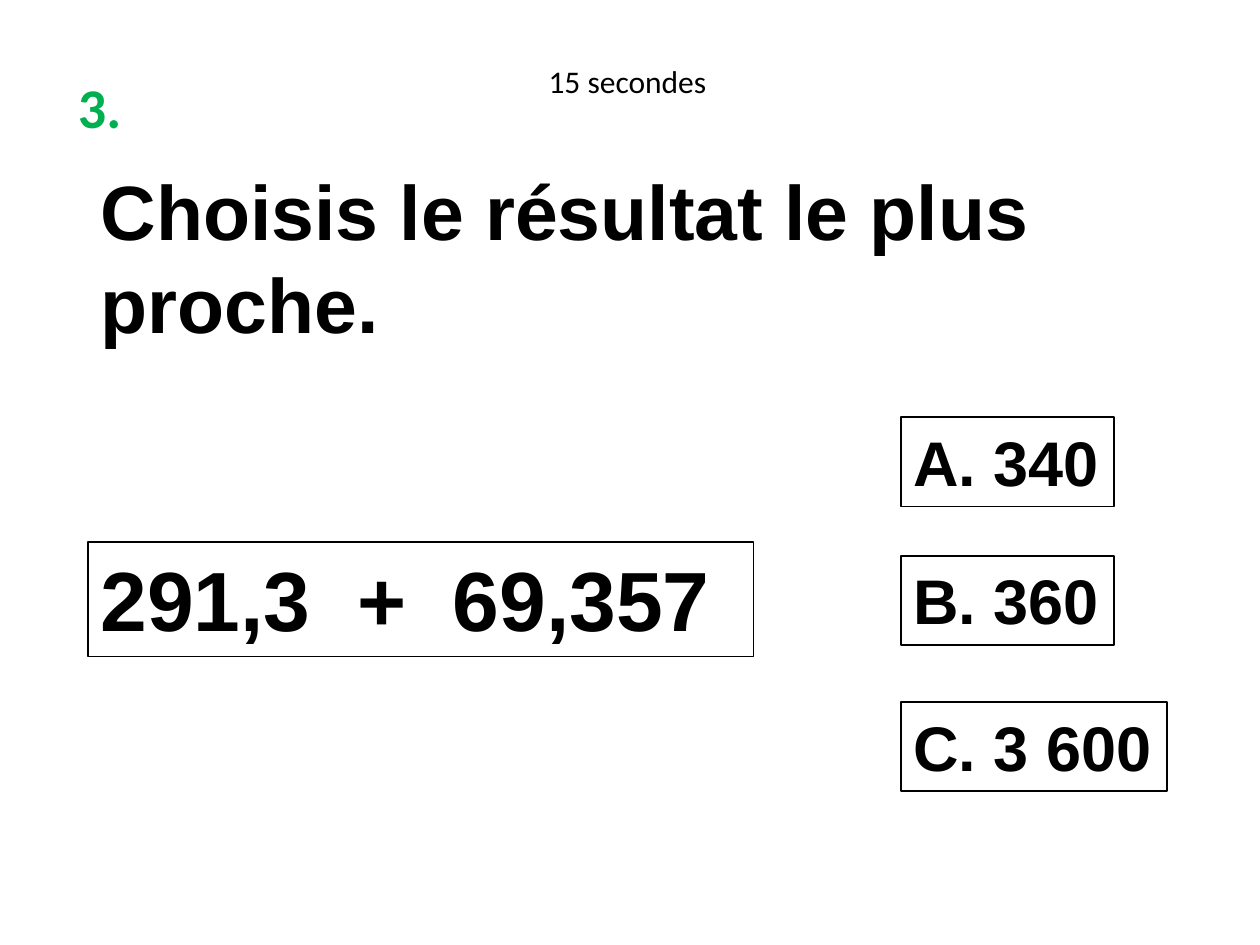
import pptx
import pptx.dml.color
import pptx.enum.text
import pptx.util
from pptx.util import Inches

BLACK = pptx.dml.color.RGBColor(0x00, 0x00, 0x00)
WHITE = pptx.dml.color.RGBColor(0xFF, 0xFF, 0xFF)
GREEN = pptx.dml.color.RGBColor(0x00, 0xB0, 0x50)

presentation = pptx.Presentation()
presentation.slide_width = Inches(10)
presentation.slide_height = Inches(7.5)
slide = presentation.slides.add_slide(presentation.slide_layouts[6])


def add_text(text, left, top, width, height, size, font="Arial", color=BLACK, bold=True):
    box = slide.shapes.add_textbox(Inches(left), Inches(top), Inches(width), Inches(height))
    box.text_frame.word_wrap = True
    paragraph = box.text_frame.paragraphs[0]
    paragraph.text = text
    paragraph.font.name = font
    paragraph.font.size = pptx.util.Pt(size)
    paragraph.font.bold = bold
    paragraph.font.color.rgb = color
    return box


add_text("3.", 0.52, 0.53, 0.79, 0.65, 32, "Calibri", GREEN)
timer = add_text("15 secondes", 3.5, 0.44, 2.96, 0.41, 18, "Calibri", bold=False)
timer.text_frame.paragraphs[0].alignment = pptx.enum.text.PP_ALIGN.CENTER

framed_boxes = [add_text("291,3  +  69,357", 0.7, 4.3, 5.28, 0.91, 48)]
answers = [("A. 340", 3.31, 1.69), ("B. 360", 4.41, 1.69), ("C. 3 600", 5.57, 2.11)]
for answer, top, width in answers:
    framed_boxes.append(add_text(answer, 7.15, top, width, 0.71, 36))

for box in framed_boxes:
    box.fill.solid()
    box.fill.fore_color.rgb = WHITE
    box.line.color.rgb = BLACK
    box.line.width = pptx.util.Pt(1)

question = add_text("Choisis le résultat le plus proche.", 0.7, 1.25, 8.43, 1.58, 44)
question.fill.solid()
question.fill.fore_color.rgb = WHITE

presentation.save("out.pptx")
